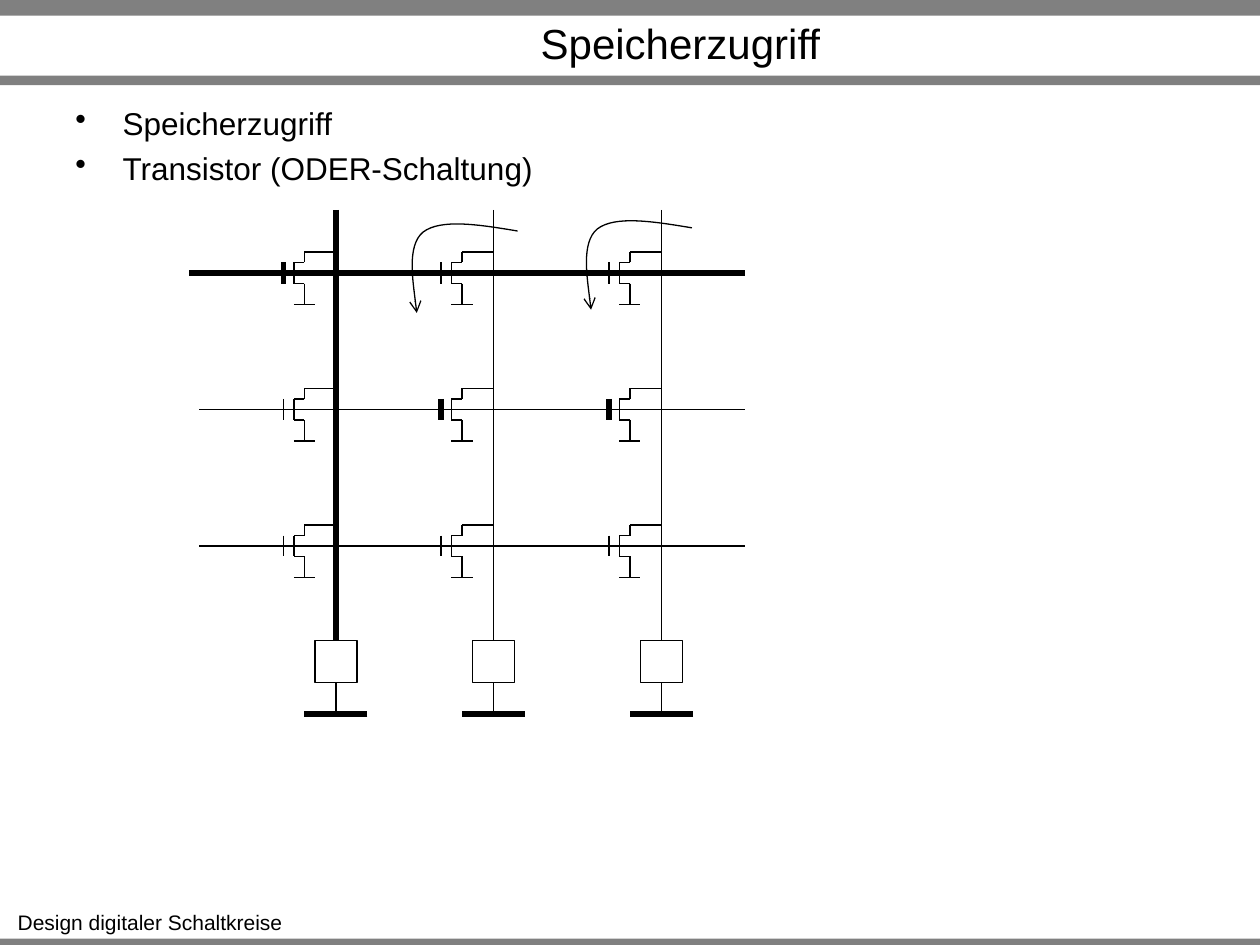
from dataclasses import dataclass
from itertools import product

from lxml.etree import SubElement
from pptx import Presentation
from pptx.dml.color import RGBColor
from pptx.enum.shapes import MSO_CONNECTOR, MSO_SHAPE
from pptx.enum.text import MSO_ANCHOR, MSO_AUTO_SIZE, PP_ALIGN
from pptx.oxml.ns import qn
from pptx.util import Emu, Pt

PX = 7620  # EMU per px, 120 px to the inch


@dataclass(frozen=True)
class Theme:
    font: str = "Arial"
    ink: RGBColor = RGBColor(0, 0, 0)
    bar: RGBColor = RGBColor(0x80, 0x80, 0x80)
    title: int = 24
    body: int = 18
    footer: int = 12
    thin: float = 0.75
    thick: float = 3


def px(*values):
    return [Emu(v * PX) for v in values]


def write(tf, text, *, theme, size, align=PP_ALIGN.LEFT, anchor=MSO_ANCHOR.TOP,
          wrap=True, bullet=None, indent=0, gap=0):
    """Fill a text frame, one paragraph for each line of text."""
    tf.word_wrap = wrap
    tf.auto_size = MSO_AUTO_SIZE.NONE
    tf.vertical_anchor = anchor
    for i, line in enumerate(text.split("\n")):
        p = tf.add_paragraph() if i else tf.paragraphs[0]
        p.alignment = align
        if bullet:
            pPr = p._p.get_or_add_pPr()
            pPr.set("marL", str(indent * PX))
            pPr.set("indent", str(-indent * PX))
            SubElement(pPr, qn("a:buChar"), char=bullet)
        p.space_before = Pt(gap if i else 0)
        r = p.add_run()
        r.text = line
        r.font.name, r.font.size = theme.font, Pt(size)
        r.font.color.rgb = theme.ink


class Sketch:
    def __init__(self, prs, theme):
        self.theme = theme
        self.s = prs.slides.add_slide(prs.slide_layouts[5])

    def title(self, text, x, y, w, h):
        sp = self.s.shapes.title
        sp.left, sp.top, sp.width, sp.height = px(x, y, w, h)
        write(sp.text_frame, text, theme=self.theme, size=self.theme.title,
              align=PP_ALIGN.CENTER, anchor=MSO_ANCHOR.MIDDLE)

    def text(self, text, x, y, w, h, **style):
        sp = self.s.shapes.add_textbox(*px(x, y, w, h))
        write(sp.text_frame, text, theme=self.theme, **style)

    def outline(self, sp, width):
        sp.line.color.rgb = self.theme.ink
        sp.line.width = Pt(width)

    def rect(self, x, y, w, h, fill=None):
        sp = self.s.shapes.add_shape(MSO_SHAPE.RECTANGLE, *px(x, y, w, h))
        sp.shadow.inherit = False
        if fill is None:
            sp.fill.background()
            self.outline(sp, self.theme.thin)
        else:
            sp.fill.solid()
            sp.fill.fore_color.rgb = fill
            sp.line.fill.background()

    def line(self, x1, y1, x2, y2, thick=False, group=None):
        shapes = (group or self.s).shapes
        sp = shapes.add_connector(MSO_CONNECTOR.STRAIGHT, *px(x1, y1, x2, y2))
        self.outline(sp, self.theme.thick if thick else self.theme.thin)
        SubElement(sp._element.spPr, qn("a:effectLst"))

    def transistor(self, col, row, thick_gate):
        group = self.s.shapes.add_group_shape()
        self.line(col - 50, row - 10, col - 50, row + 10, thick_gate, group)
        for x1, y1, x2, y2 in TRANSISTOR:
            self.line(col + x1, row + y1, col + x2, row + y2, group=group)

    def curved_arrow(self, points):
        """Draw cubic curves: a start, then two controls and an end for each."""
        start, *rest = [tuple(px(*point)) for point in points]
        builder = self.s.shapes.build_freeform(*start, scale=1.0)
        builder.add_line_segments(rest, close=False)
        sp = builder.convert_to_shape()
        sp.shadow.inherit = False
        sp.fill.background()
        self.outline(sp, self.theme.thin)
        SubElement(sp.line._get_or_add_ln(), qn("a:tailEnd"), type="arrow")
        # Turn each three straight segments into one curve
        segments = sp._element.xpath(".//a:lnTo")
        outline = segments[0].getparent()
        for i in range(0, len(segments), 3):
            curve = SubElement(outline, qn("a:cubicBezTo"))
            for segment in segments[i:i + 3]:
                curve.append(segment[0])
                outline.remove(segment)


COLUMNS = [320, 470, 630]
ROWS = [260, 390, 520]
THICK_GATES = {(320, 260), (470, 390), (630, 390)}
# Lines of a transistor, measured from its crossing of word and bit line
TRANSISTOR = [
    (-30, 10, -30, 30), (-30, -20, 0, -20), (-30, -20, -30, -10),
    (-30, 10, -40, 10), (-30, -10, -40, -10), (-40, -10, -40, 10),
    (-40, 30, -20, 30),
]
CURRENT = [(493, 220), (457, 214), (420, 208), (403, 221),
           (387, 234), (397, 298), (397, 298)]


def main():
    prs = Presentation()
    prs.slide_width, prs.slide_height = px(1200, 900)
    theme = Theme()
    sketch = Sketch(prs, theme)

    # Frame
    for y, h in [(894, 6), (0, 15), (72, 9)]:
        sketch.rect(0, y, 1200, h, fill=theme.bar)
    sketch.text("Design digitaler Schaltkreise", 4, 860, 278, 36,
                size=theme.footer, align=PP_ALIGN.CENTER, wrap=False)

    # Title and bullets
    sketch.title("Speicherzugriff", 156, 18, 984, 46)
    sketch.text("Speicherzugriff\nTransistor (ODER-Schaltung)", 60, 93, 1080, 80,
                size=theme.body, bullet="•", indent=45, gap=4)

    # Word lines, the first one active
    for row in ROWS:
        active = row == ROWS[0]
        left = 180 if active else 190
        sketch.line(left, row, left + 30, row, active)
        sketch.line(left + 30, row, 710, row, active)

    # Transistors
    for row, col in product(ROWS, COLUMNS):
        sketch.transistor(col, row, (col, row) in THICK_GATES)

    # Bit lines with load and ground, the first one active
    for col in COLUMNS:
        sketch.line(col, 200, col, 610, thick=col == COLUMNS[0])
        sketch.rect(col - 20, 610, 40, 40)
        sketch.line(col, 650, col, 680)
        sketch.line(col + 30, 680, col - 30, 680, thick=True)

    # Current arrows
    for dx, dy in [(0, 0), (166, -3)]:
        sketch.curved_arrow([(x + dx, y + dy) for x, y in CURRENT])

    prs.save("out.pptx")


if __name__ == "__main__":
    main()
